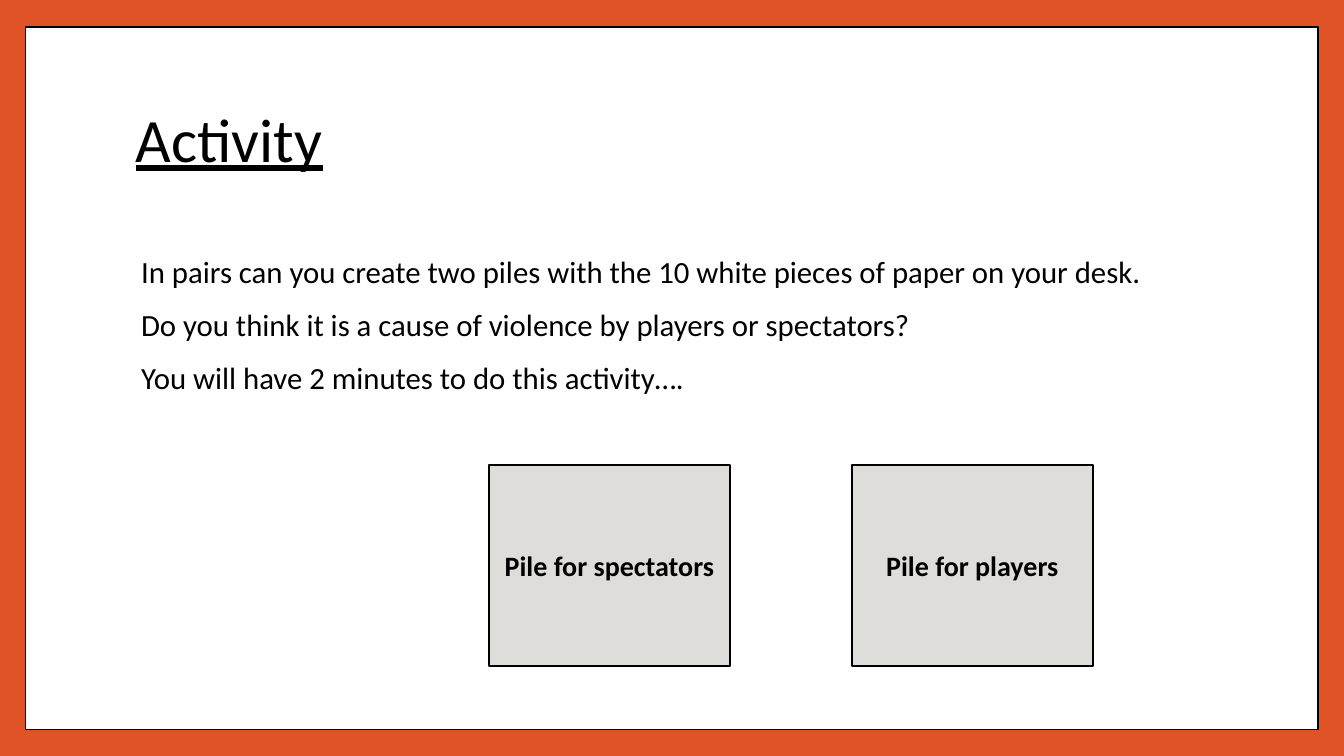
from dataclasses import dataclass

import pptx
import pptx.dml.color
import pptx.enum.shapes
import pptx.enum.text
import pptx.util

COLS, ROWS = 160, 90
ALIGN = pptx.enum.text.PP_ALIGN
ANCHOR = pptx.enum.text.MSO_ANCHOR


@dataclass(frozen=True)
class Theme:
    font: str = "Calibri"
    border: str = "DF5327"
    page: str = "FFFFFF"
    pile: str = "DFDDD9"
    ink: str = "000000"
    title_pt: float = 44
    body_pt: float = 22
    pile_pt: float = 20
    paragraph_gap_pt: float = 14


@dataclass(frozen=True)
class Area:
    col: float
    row: float
    cols: float
    rows: float


@dataclass(frozen=True)
class TextStyle:
    size: float
    bold: bool = False
    underline: bool = False
    align: ALIGN = ALIGN.LEFT
    anchor: ANCHOR = ANCHOR.MIDDLE
    line_spacing: float = 0.9
    space_before: float = 0
    inset_left: float = 0.1
    inset_top: float = 0.05


THEME = Theme()
PAGE = Area(3, 3.24, 153.9, 83.64)
TITLE = Area(15, 8.04, 129.6, 17.76)
BODY = Area(15, 23.64, 129.6, 56.28)
PILE = Area(58.2, 55.32, 28.7, 24)
PILE_STEP = 43.2

TITLE_STYLE = TextStyle(THEME.title_pt, underline=True)
BODY_STYLE = TextStyle(
    THEME.body_pt,
    anchor=ANCHOR.TOP,
    space_before=THEME.paragraph_gap_pt,
    inset_left=0.15,
    inset_top=0.58,
)
PILE_STYLE = TextStyle(THEME.pile_pt, bold=True, align=ALIGN.CENTER, line_spacing=1)

INSTRUCTIONS = [
    "In pairs can you create two piles with the 10 white pieces of paper on your desk.",
    "Do you think it is a cause of violence by players or spectators?",
    "You will have 2 minutes to do this activity….",
]
PILES = ["Pile for spectators", "Pile for players"]


def rgb(value: str) -> pptx.dml.color.RGBColor:
    return pptx.dml.color.RGBColor.from_string(value)


def place(prs, area: Area) -> tuple[int, int, int, int]:
    col, row = prs.slide_width / COLS, prs.slide_height / ROWS
    return (
        round(area.col * col),
        round(area.row * row),
        round(area.cols * col),
        round(area.rows * row),
    )


def write(sp, lines: list[str], style: TextStyle) -> None:
    tf = sp.text_frame
    tf.text = "\n".join(lines)
    tf.word_wrap = True
    tf.vertical_anchor = style.anchor
    tf.margin_left = pptx.util.Inches(style.inset_left)
    tf.margin_top = pptx.util.Inches(style.inset_top)
    for p in tf.paragraphs:
        p.alignment = style.align
        p.line_spacing = style.line_spacing
        p.space_before = pptx.util.Pt(style.space_before)
        for r in p.runs:
            r.font.name = THEME.font
            r.font.size = pptx.util.Pt(style.size)
            r.font.bold = style.bold
            r.font.underline = style.underline
            r.font.color.rgb = rgb(THEME.ink)


def add_box(prs, s, area: Area, fill: str, line_pt: float):
    sp = s.shapes.add_shape(
        pptx.enum.shapes.MSO_SHAPE.RECTANGLE, *place(prs, area)
    )
    sp.shadow.inherit = False
    sp.fill.solid()
    sp.fill.fore_color.rgb = rgb(fill)
    sp.line.color.rgb = rgb(THEME.ink)
    sp.line.width = pptx.util.Pt(line_pt)
    return sp


def add_text(prs, s, area: Area, lines: list[str], style: TextStyle) -> None:
    write(s.shapes.add_textbox(*place(prs, area)), lines, style)


def main() -> None:
    prs = pptx.Presentation()
    prs.slide_width = pptx.util.Inches(13.33)
    prs.slide_height = pptx.util.Inches(7.5)
    s = prs.slides.add_slide(prs.slide_layouts[6])
    s.background.fill.solid()
    s.background.fill.fore_color.rgb = rgb(THEME.border)

    add_box(prs, s, PAGE, THEME.page, 1)
    add_text(prs, s, TITLE, ["Activity"], TITLE_STYLE)
    add_text(prs, s, BODY, INSTRUCTIONS, BODY_STYLE)
    for i, label in enumerate(PILES):
        area = Area(PILE.col + i * PILE_STEP, PILE.row, PILE.cols, PILE.rows)
        write(add_box(prs, s, area, THEME.pile, 1.5), [label], PILE_STYLE)

    prs.save("out.pptx")


if __name__ == "__main__":
    main()
